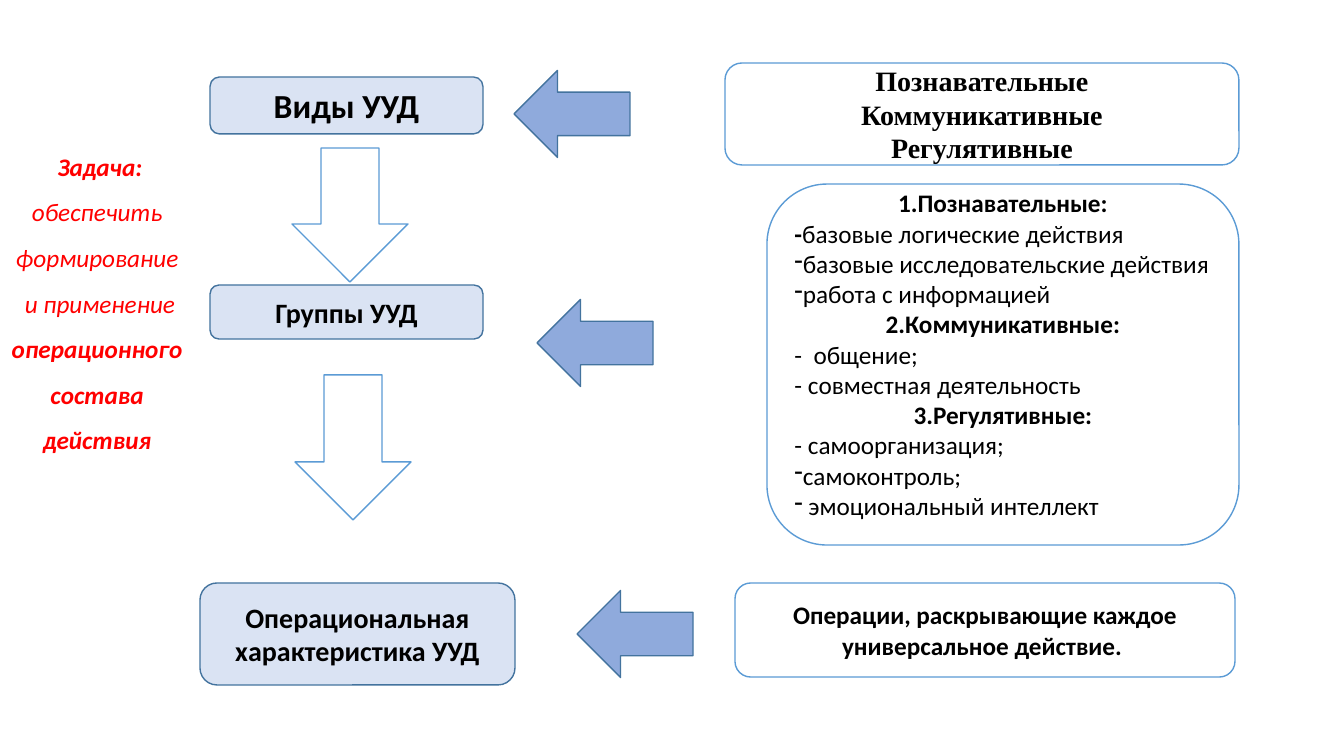
from lxml import etree
from pptx import Presentation
from pptx.dml.color import RGBColor
from pptx.enum.shapes import MSO_SHAPE
from pptx.enum.text import MSO_ANCHOR, PP_ALIGN
from pptx.oxml.ns import qn
from pptx.util import Pt

PX = 914400 / 100.8
ROUNDED, DOWN_ARROW = MSO_SHAPE.ROUNDED_RECTANGLE, MSO_SHAPE.DOWN_ARROW
CENTER, LEFT = PP_ALIGN.CENTER, PP_ALIGN.LEFT
MIDDLE, TOP = MSO_ANCHOR.MIDDLE, MSO_ANCHOR.TOP

COLORS = {
    "stage": "DAE3F3", "stage_line": "43739E", "pointer": "8FAADC",
    "plain": "FFFFFF", "plain_line": "5B9BD5", "text": "000000", "task": "FF0000",
}

# (box in px, fill, line, font, size, lines)
BOXES = [
    ((210, 77, 273, 57), "stage", "stage_line", "Calibri", 24, ["Виды УУД"]),
    ((210, 285, 273, 54), "stage", "stage_line", "Calibri", 20, ["Группы УУД"]),
    ((200, 583, 315, 102), "stage", "stage_line", "Calibri", 20,
     ["Операциональная характеристика УУД"]),
    ((725, 63, 514, 102), "plain", "plain_line", "Times New Roman", 20,
     ["Познавательные", "Коммуникативные", "Регулятивные"]),
    ((735, 583, 500, 94), "plain", "plain_line", "Calibri", 18,
     ["Операции, раскрывающие каждое универсальное действие. "]),
]

DOWN_ARROWS = [(292, 148, 116, 134), (295, 375, 116, 145)]
POINTER_CENTERS = [(572, 114), (595, 343), (635, 634)]
POINTER_SIZE = (87, 116)  # before the quarter turn

GROUPS_BOX = (767, 184, 472, 361)
GROUPS_BOTTOM_INSET = 21
# (kind, runs as (text, bold))
GROUPS = [
    ("heading", [("1.Познавательные:", True)]),
    ("plain", [("-", True), ("базовые логические действия", False)]),
    ("bullet", [("базовые исследовательские действия", False)]),
    ("bullet", [("работа с информацией", False)]),
    ("heading", [("2.Коммуникативные:", True)]),
    ("plain", [("-  общение;", False)]),
    ("plain", [("- совместная деятельность", False)]),
    ("heading", [("3.Регулятивные:", True)]),
    ("plain", [("- самоорганизация;", False)]),
    ("bullet", [("самоконтроль;", False)]),
    ("bullet", [(" эмоциональный интеллект", False)]),
]

TASK_BOX = (0, 146, 200, 377)
TASK_GAP = 11  # points between lines
TASK = [
    ("Задача:", True), ("обеспечить ", False), ("формирование ", False),
    ("и применение", False), ("операционного ", True), ("состава ", True),
    ("действия ", True),
]


def emu(box):
    return [round(value * PX) for value in box]


def add_outlined(slide, kind, box, fill, line):
    shape = slide.shapes.add_shape(kind, *emu(box))
    shape.shadow.inherit = False
    shape.fill.solid()
    shape.fill.fore_color.rgb = RGBColor.from_string(COLORS[fill])
    shape.line.color.rgb = RGBColor.from_string(COLORS[line])
    shape.line.width = Pt(1)
    return shape


def write(shape, paragraphs, size, font="Calibri", color="text",
          italic=False, anchor=MIDDLE, gap=0):
    """Fill a shape with paragraphs given as (kind, runs)."""
    frame = shape.text_frame
    frame.word_wrap = True
    frame.vertical_anchor = anchor
    for index, (kind, runs) in enumerate(paragraphs):
        paragraph = frame.add_paragraph() if index else frame.paragraphs[0]
        paragraph.alignment = CENTER if kind == "heading" else LEFT
        if gap and index:
            paragraph.space_before = Pt(gap)
        if kind == "bullet":
            properties = paragraph._p.get_or_add_pPr()
            etree.SubElement(properties, qn("a:buFontTx"))
            etree.SubElement(properties, qn("a:buChar"), char="-")
        for text, bold in runs:
            run = paragraph.add_run()
            run.text = text
            run.font.name = font
            run.font.size = Pt(size)
            run.font.bold = bold
            run.font.italic = italic
            run.font.color.rgb = RGBColor.from_string(COLORS[color])


def main():
    presentation = Presentation()
    presentation.slide_width, presentation.slide_height = emu((1344, 756))
    slide = presentation.slides.add_slide(presentation.slide_layouts[6])

    for box, fill, line, font, size, lines in BOXES:
        shape = add_outlined(slide, ROUNDED, box, fill, line)
        write(shape, [("heading", [(text, True)]) for text in lines], size, font)

    groups = add_outlined(slide, ROUNDED, GROUPS_BOX, "plain", "plain_line")
    groups.text_frame.margin_top = 0
    groups.text_frame.margin_bottom = round(GROUPS_BOTTOM_INSET * PX)
    write(groups, GROUPS, 18)

    for box in DOWN_ARROWS:
        add_outlined(slide, DOWN_ARROW, box, "plain", "plain_line")
    width, height = POINTER_SIZE
    for x, y in POINTER_CENTERS:
        box = (x - width / 2, y - height / 2, width, height)
        add_outlined(slide, DOWN_ARROW, box, "pointer", "stage_line").rotation = 90

    task = slide.shapes.add_textbox(*emu(TASK_BOX))
    write(task, [("heading", [line]) for line in TASK], 18,
          color="task", italic=True, anchor=TOP, gap=TASK_GAP)

    presentation.save("out.pptx")


if __name__ == "__main__":
    main()
